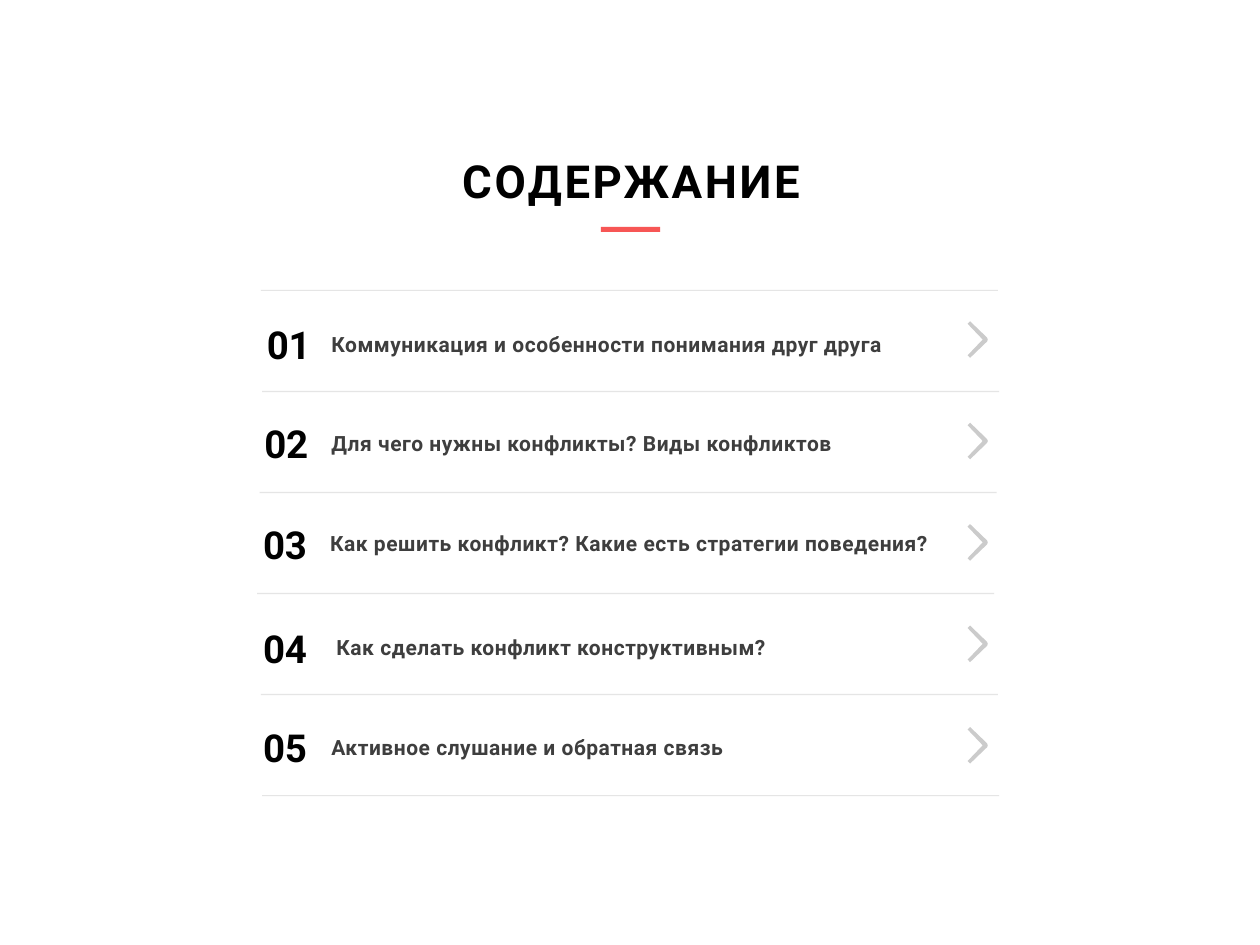
from dataclasses import dataclass

from pptx import Presentation
from pptx.dml.color import RGBColor
from pptx.enum.shapes import MSO_SHAPE
from pptx.enum.text import MSO_ANCHOR, PP_ALIGN
from pptx.util import Inches, Pt

RECTANGLE = MSO_SHAPE.RECTANGLE
MIDDLE = MSO_ANCHOR.MIDDLE
LEFT, CENTER = PP_ALIGN.LEFT, PP_ALIGN.CENTER
TITLE_ONLY_LAYOUT = 5


@dataclass(frozen=True)
class Theme:
    font: str = "Roboto"
    ink: RGBColor = RGBColor(0x00, 0x00, 0x00)
    topic: RGBColor = RGBColor(0x3E, 0x3E, 0x3E)
    accent: RGBColor = RGBColor(0xF7, 0x56, 0x55)
    divider: RGBColor = RGBColor(0xE5, 0xE5, 0xE5)
    arrow: RGBColor = RGBColor(0xCB, 0xCB, 0xCB)
    title_size: int = 26
    number_size: int = 22
    topic_size: int = 12


THEME = Theme()

# number left, topic left, topic centre, number centre, topic
TOPICS = [
    (2.02, 2.63, 2.73, 2.73, "Коммуникация и особенности понимания друг друга"),
    (2.00, 2.63, 3.52, 3.52, "Для чего нужны конфликты? Виды конфликтов"),
    (1.99, 2.62, 4.31, 4.32, "Как решить конфликт? Какие есть стратегии поведения?"),
    (1.99, 2.67, 5.14, 5.14, "Как сделать конфликт конструктивным?"),
    (1.99, 2.63, 5.93, 5.93, "Активное слушание и обратная связь"),
]
ROW_HEIGHT = 0.4

DIVIDER_LEFTS = [2.07, 2.08, 2.06, 2.04, 2.07, 2.08]
DIVIDER_TOP, DIVIDER_PITCH = 2.3, 0.802

ARROW_LEFT, ARROW_TOP, ARROW_PITCH = 7.68, 2.55, 0.805
ARROW_OUTLINE = [
    (0.01, 0.26), (0, 0.27), (0.01, 0.28), (0.02, 0.29), (0.03, 0.28),
    (0.155, 0.16), (0.16, 0.145), (0.155, 0.13),
    (0.03, 0.01), (0.02, 0), (0.01, 0.01), (0, 0.02), (0.01, 0.03),
    (0.12, 0.145),
]


def write(frame, text, size, color, spacing, align=LEFT):
    frame.vertical_anchor = MIDDLE
    frame.word_wrap = True
    paragraph = frame.paragraphs[0]
    paragraph.alignment = align
    run = paragraph.add_run()
    run.text = text
    run.font._element.set("spc", str(round(spacing * 100)))
    font = paragraph.font
    font.name = THEME.font
    font.size = Pt(size)
    font.bold = True
    font.color.rgb = color


def add_title(slide, text):
    title = slide.shapes.title
    title.left, title.top = Inches(1.04), Inches(1.21)
    title.width, title.height = Inches(7.94), Inches(0.45)
    write(title.text_frame, text, THEME.title_size, THEME.ink, 1.5, CENTER)


def add_label(slide, left, center, width, text, size, color, spacing, insets):
    label = slide.shapes.add_textbox(
        Inches(left), Inches(center - ROW_HEIGHT / 2), Inches(width), Inches(ROW_HEIGHT)
    )
    frame = label.text_frame
    frame.margin_left, frame.margin_right = map(Inches, insets)
    write(frame, text, size, color, spacing)


def paint(shape, color):
    shape.shadow.inherit = False
    shape.fill.solid()
    shape.fill.fore_color.rgb = color
    shape.line.fill.background()


def add_bar(slide, left, top, width, height, color):
    bar = slide.shapes.add_shape(
        RECTANGLE, Inches(left), Inches(top), Inches(width), Inches(height)
    )
    paint(bar, color)


def add_arrow(slide, left, top):
    points = [(Inches(left + x), Inches(top + y)) for x, y in ARROW_OUTLINE]
    outline = slide.shapes.build_freeform(*points[0])
    outline.add_line_segments(points[1:], close=True)
    paint(outline.convert_to_shape(), THEME.arrow)


def main():
    deck = Presentation()
    deck.slide_width, deck.slide_height = Inches(10), Inches(7.5)
    slide = deck.slides.add_slide(deck.slide_layouts[TITLE_ONLY_LAYOUT])

    add_title(slide, "СОДЕРЖАНИЕ")
    add_bar(slide, 4.77, 1.8, 0.47, 0.04, THEME.accent)

    for row, left in enumerate(DIVIDER_LEFTS):
        add_bar(slide, left, DIVIDER_TOP + row * DIVIDER_PITCH, 5.85, 0.01, THEME.divider)

    for row, (number_left, topic_left, topic_center, number_center, topic) in enumerate(TOPICS):
        add_label(slide, number_left, number_center, 0.53, f"{row + 1:02}",
                  THEME.number_size, THEME.ink, -0.1, (0.1, 0))
        add_label(slide, topic_left, topic_center, 4.9, topic,
                  THEME.topic_size, THEME.topic, 0.3, (0, 0.1))
        add_arrow(slide, ARROW_LEFT, ARROW_TOP + row * ARROW_PITCH)

    deck.save("out.pptx")


if __name__ == "__main__":
    main()
